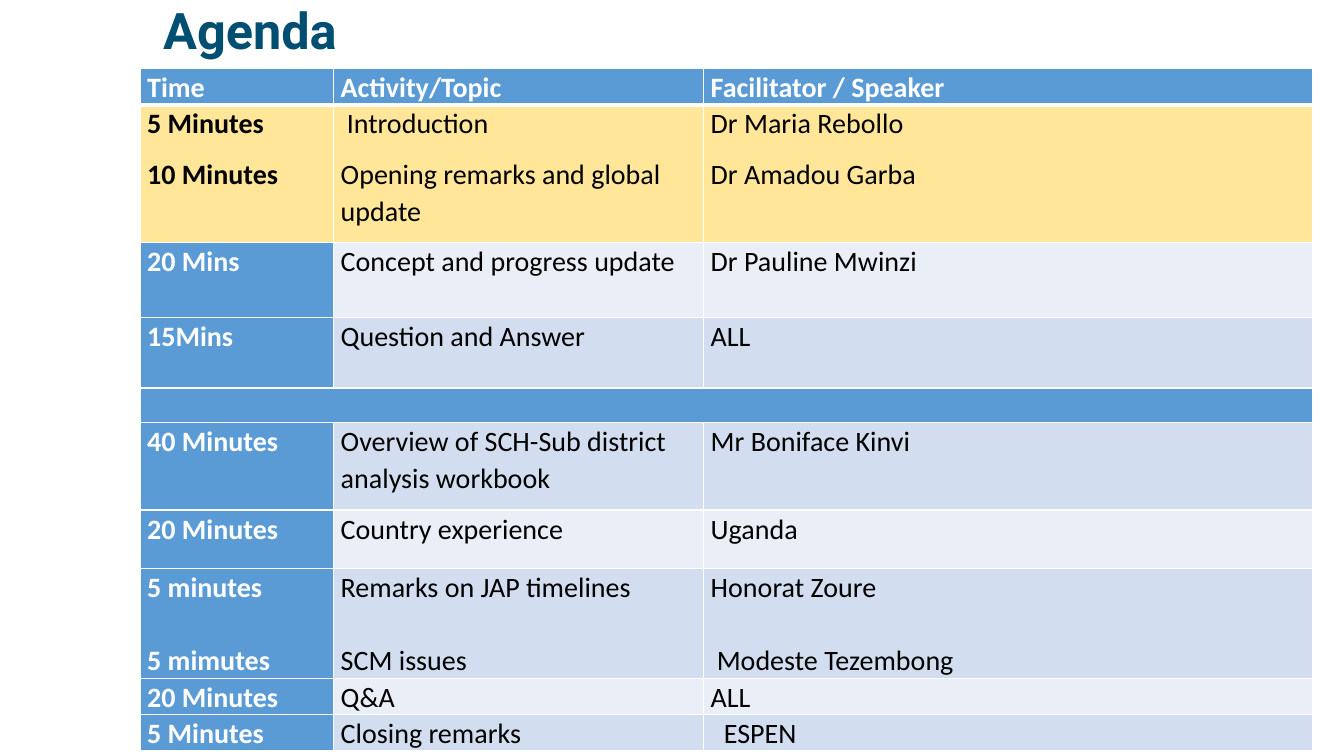
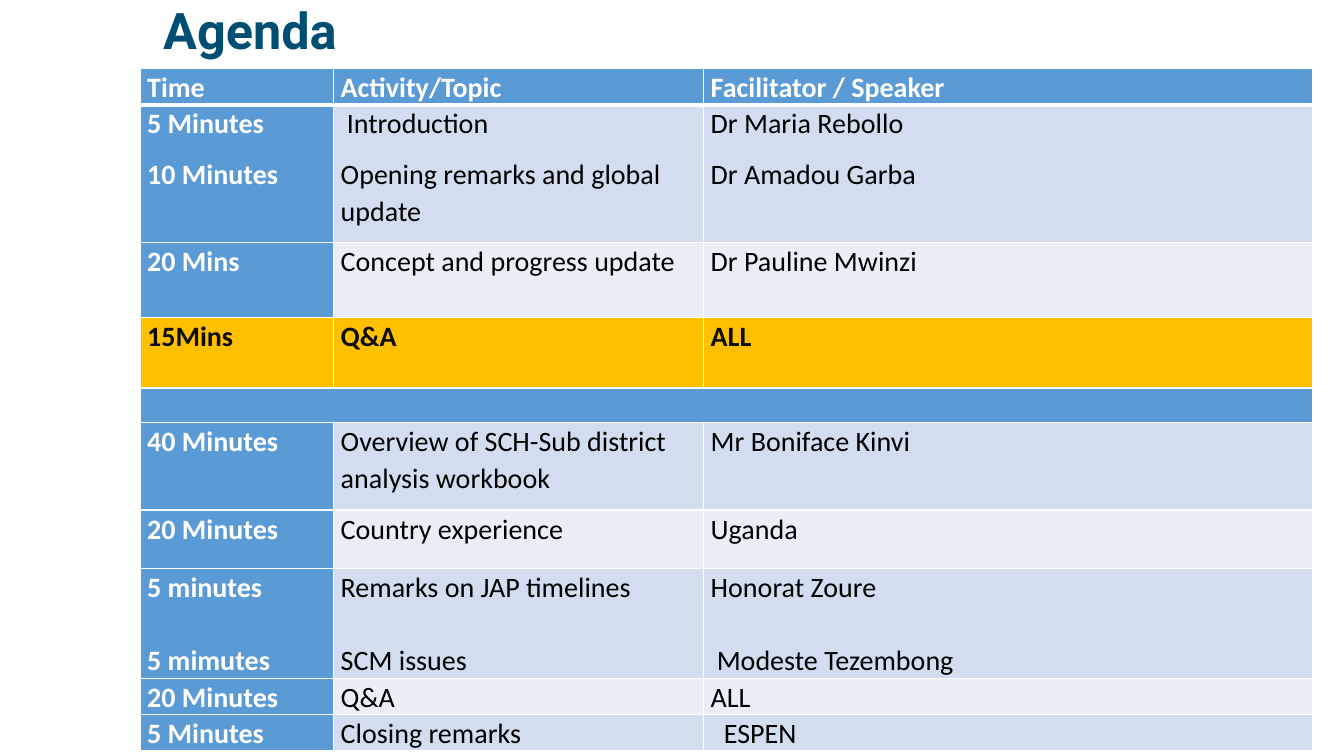
"""Build two agenda slides, each highlighting a different session."""
from dataclasses import dataclass

from lxml import etree
from pptx import Presentation
from pptx import util as u
from pptx.dml.color import RGBColor
from pptx.enum import text
from pptx.oxml import ns

HEADER = ("Time", "Activity/Topic", "Facilitator / Speaker")
SESSIONS = [
    (("5 Minutes", "10 Minutes"),
     ("Introduction", "Opening remarks and global update"),
     ("Dr Maria Rebollo", "Dr Amadou Garba")),
    ("20 Mins", "Concept and progress update", "Dr Pauline Mwinzi"),
    ("15Mins", "Question and Answer", "ALL"),
    None,
    ("40 Minutes", "Overview of SCH-Sub district analysis workbook", "Mr Boniface Kinvi"),
    ("20 Minutes", "Country experience", "Uganda"),
    (("5 minutes", "5 mimutes"),
     ("Remarks on JAP timelines", "SCM issues"),
     ("Honorat Zoure", "Modeste Tezembong")),
    ("20 Minutes", "Q&A", "ALL"),
    ("5 Minutes", "Closing remarks", "ESPEN"),
]
SLIDES = [
    {"row": 1, "fill": "FFE699", "color": "000000", "bold": False, "cells": SESSIONS[0]},
    {"row": 3, "fill": "FFC000", "color": "0D0D0D", "bold": True,
     "cells": ("15Mins", "Q&A", "ALL")},
]
COLUMN_WIDTHS = (1.92, 3.67, 6.04)
ROW_HEIGHTS = (0.36, 1.37, 0.74, 0.7, 0.34, 0.87, 0.58, 1.09, 0.36, 0.36)
INDENTS = {"Introduction": 0.06, "Modeste Tezembong": 0.06, "ESPEN": 0.13}
WIDE_GAP_ROW = 7


@dataclass(frozen=True)
class Theme:
    title_font: str = "Roboto"
    body_font: str = "Calibri"
    title_size: int = 36
    body_size: int = 20
    title: str = "004E71"
    accent: str = "5B9BD5"
    bands: tuple = ("EAEFF7", "D2DEEF")
    light: str = "FFFFFF"
    dark: str = "000000"
    gap: int = 10
    wide_gap: int = 26


THEME = Theme()


def add_run(paragraph, words, font_name, size, color, bold):
    run = paragraph.add_run()
    run.text = words
    run.font.name = font_name
    run.font.size = u.Pt(size)
    run.font.bold = bold
    run.font.color.rgb = RGBColor.from_string(color)


def add_title(slide, words):
    box = slide.shapes.add_textbox(u.Inches(1.52), 0, u.Inches(11.5), u.Inches(0.65))
    frame = box.text_frame
    frame.word_wrap = True
    frame.vertical_anchor = text.MSO_ANCHOR.MIDDLE
    paragraph = frame.paragraphs[0]
    paragraph.line_spacing = 0.9
    add_run(paragraph, words, THEME.title_font, THEME.title_size, THEME.title, True)


def set_borders(cell, row):
    properties = cell._tc.get_or_add_tcPr()
    widths = {"lnL": 1, "lnR": 1, "lnT": 3 if row == 1 else 1, "lnB": 3 if row == 0 else 1}
    for tag, width in widths.items():
        line = etree.SubElement(properties, ns.qn(f"a:{tag}"), w=str(u.Pt(width)))
        fill = etree.SubElement(line, ns.qn("a:solidFill"))
        etree.SubElement(fill, ns.qn("a:srgbClr"), val=THEME.light)


def style_cell(cell, row, fill):
    cell.margin_left = cell.margin_right = u.Inches(0.07)
    cell.margin_top = cell.margin_bottom = 0
    set_borders(cell, row)
    cell.fill.solid()
    cell.fill.fore_color.rgb = RGBColor.from_string(fill)


def write_cell(cell, content, gap, color, bold):
    lines = (content,) if isinstance(content, str) else content
    for index, words in enumerate(lines):
        frame = cell.text_frame
        paragraph = frame.add_paragraph() if index else frame.paragraphs[0]
        paragraph.line_spacing = 1.07
        paragraph.space_after = u.Pt(gap)
        if words in INDENTS:
            paragraph._p.get_or_add_pPr().set("marL", str(u.Inches(INDENTS[words])))
        add_run(paragraph, words, THEME.body_font, THEME.body_size, color, bold)


def cell_style(row, column, highlight):
    if row == highlight["row"]:
        return highlight["fill"], highlight["color"], column == 0 or highlight["bold"]
    if row == 0 or column == 0 or SESSIONS[row - 1] is None:
        return THEME.accent, THEME.light, True
    return THEME.bands[row % 2], THEME.dark, False


def add_agenda(slide, highlight):
    rows = [HEADER, *SESSIONS]
    rows[highlight["row"]] = highlight["cells"]
    table = slide.shapes.add_table(
        len(rows), len(HEADER), u.Inches(1.39), u.Inches(0.68),
        u.Inches(sum(COLUMN_WIDTHS)), u.Inches(sum(ROW_HEIGHTS))).table
    for column, width in zip(table.columns, COLUMN_WIDTHS):
        column.width = u.Inches(width)
    for row, (contents, height) in enumerate(zip(rows, ROW_HEIGHTS)):
        table.rows[row].height = u.Inches(height)
        gap = THEME.wide_gap if row == WIDE_GAP_ROW else THEME.gap
        for column in range(len(HEADER)):
            cell = table.cell(row, column)
            fill, color, bold = cell_style(row, column, highlight)
            style_cell(cell, row, fill)
            if contents:
                write_cell(cell, contents[column], gap, color, bold)
        if contents is None:
            table.cell(row, 0).merge(table.cell(row, len(HEADER) - 1))


def main():
    presentation = Presentation()
    presentation.slide_width = u.Inches(13.33)
    presentation.slide_height = u.Inches(7.5)
    for highlight in SLIDES:
        slide = presentation.slides.add_slide(presentation.slide_layouts[6])
        add_title(slide, "Agenda")
        add_agenda(slide, highlight)
    presentation.save("out.pptx")


if __name__ == "__main__":
    main()
